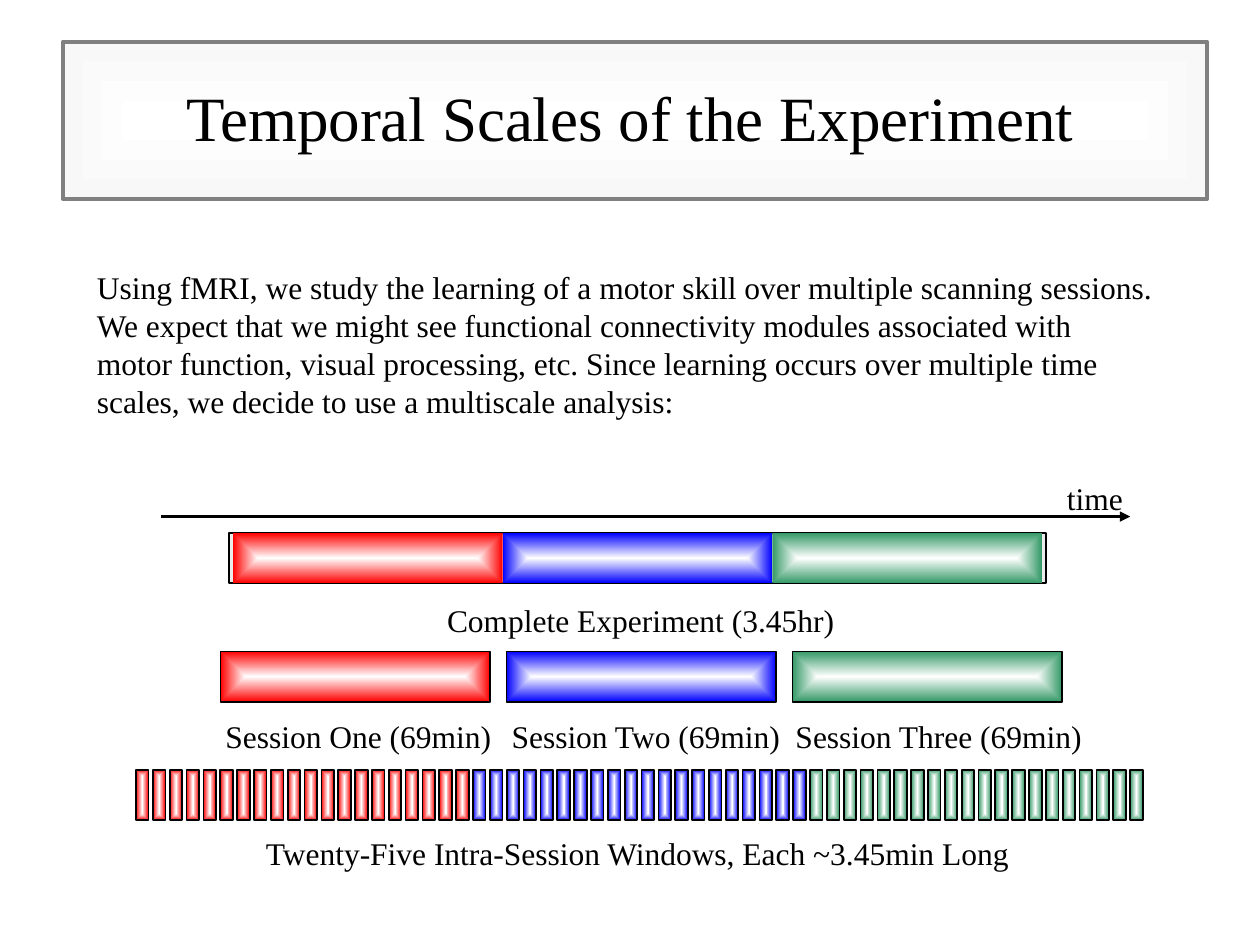
from lxml.etree import SubElement
from pptx import Presentation
from pptx.dml.color import RGBColor
from pptx.enum.shapes import MSO_CONNECTOR, MSO_SHAPE
from pptx.enum.text import MSO_ANCHOR, MSO_AUTO_SIZE, PP_ALIGN
from pptx.oxml import parse_xml
from pptx.oxml.ns import nsdecls, qn
from pptx.util import Inches, Pt

FONT = "Times New Roman"
COLORS = {
    "text": "000000", "white": "FFFFFF", "frame": "808080",
    "panel": "F8F8F8", "track": "EAEAEA",
    "one": "FF0000", "two": "0000FF", "three": "339966",
}
TITLE = "Temporal Scales of the Experiment"
INTRO = (
    "Using fMRI, we study the learning of a motor skill over multiple scanning "
    "sessions. We expect that we might see functional connectivity modules "
    "associated with motor function, visual processing, etc. Since learning "
    "occurs over multiple time scales, we decide to use a multiscale analysis:"
)
SESSIONS = [
    ("one", "Session One (69min)", 1.61, 2.47),
    ("two", "Session Two (69min)", 3.92, 2.41),
    ("three", "Session Three (69min)", 6.15, 2.6),
]
LABELS = [
    (INTRO, 0.67, 2.08, 8.58, 1.3, PP_ALIGN.LEFT),
    ("time", 8.37, 3.75, 0.67, 0.4, PP_ALIGN.LEFT),
    ("Complete Experiment (3.45hr)", 3.34, 4.72, 3.49, 0.4, PP_ALIGN.CENTER),
    ("Twenty-Five Intra-Session Windows, Each ~3.45min Long",
     1.55, 6.57, 7.02, 0.4, PP_ALIGN.CENTER),
]
BAR_H, SESSION_W, SESSION_PITCH = 0.4, 2.14, 2.27
WHOLE_Y, SESSION_Y, SESSION_LABEL_Y, WINDOW_Y = 4.23, 5.17, 5.64, 6.11
WINDOWS_PER_SESSION, WINDOW_W = 20, 0.1
FIRST_WINDOW, LAST_WINDOW = 1.08, 8.97


def rgb(name):
    return RGBColor.from_string(COLORS[name])


def add_run(p, text, size):
    r = p.add_run()
    r.text = text
    r.font.size, r.font.name = Pt(size), FONT
    r.font.color.rgb = rgb("text")


def add_label(s, text, x, y, w, h, align):
    tf = s.shapes.add_textbox(*map(Inches, (x, y, w, h))).text_frame
    tf.word_wrap = True
    tf.auto_size = MSO_AUTO_SIZE.SHAPE_TO_FIT_TEXT
    tf.paragraphs[0].alignment = align
    add_run(tf.paragraphs[0], text, 18)


def add_bar(s, x, y, w, h, edge, line="text", width=1):
    sp = s.shapes.add_shape(MSO_SHAPE.RECTANGLE, *map(Inches, (x, y, w, h)))
    sp.shadow.inherit = False
    sp.element.spPr.find(qn("a:prstGeom")).addnext(parse_xml(
        f'<a:gradFill {nsdecls("a")} rotWithShape="1"><a:gsLst>'
        f'<a:gs pos="0"><a:srgbClr val="{COLORS["white"]}"/></a:gs>'
        f'<a:gs pos="100000"><a:srgbClr val="{COLORS[edge]}"/></a:gs></a:gsLst>'
        '<a:path path="rect"><a:fillToRect l="50000" t="50000" r="50000" b="50000"/>'
        '</a:path></a:gradFill>'.replace('path="rect"', 'path="shape"')))
    if line:
        sp.line.color.rgb = rgb(line)
        sp.line.width = Pt(width)
    else:
        sp.line.fill.background()
    return sp


def add_time_arrow(s, x1, x2, y):
    arrow = s.shapes.add_connector(
        MSO_CONNECTOR.STRAIGHT, *map(Inches, (x1, y, x2, y)))
    arrow.line.color.rgb = rgb("text")
    arrow.line.width = Pt(1.5)
    SubElement(arrow.line._get_or_add_ln(), qn("a:tailEnd"), type="triangle")
    SubElement(arrow._element.spPr, qn("a:effectLst"))


def add_title(s):
    title = s.shapes.title
    title.left, title.top, title.width, title.height = map(
        Inches, (0.5, 0.3, 9, 1.25))
    tf = title.text_frame
    tf.auto_size = MSO_AUTO_SIZE.NONE
    tf.vertical_anchor = MSO_ANCHOR.MIDDLE
    tf.paragraphs[0].alignment = PP_ALIGN.CENTER
    add_run(tf.paragraphs[0], TITLE, 36)
    panel = add_bar(s, 0.5, 0.33, 9.08, 1.25, "panel", "frame", 2.25)
    title.element.addprevious(panel.element)


def main():
    prs = Presentation()
    prs.slide_width, prs.slide_height = Inches(10), Inches(7.5)
    s = prs.slides.add_slide(prs.slide_layouts[5])
    add_title(s)
    add_bar(s, 1.82, WHOLE_Y, 6.48, BAR_H, "track")

    window_count = WINDOWS_PER_SESSION * len(SESSIONS)
    window_pitch = (LAST_WINDOW - FIRST_WINDOW) / (window_count - 1)
    for i, (color, label, label_x, label_w) in enumerate(SESSIONS):
        add_bar(s, 1.85 + i * SESSION_W, WHOLE_Y, SESSION_W, BAR_H, color, None)
        add_bar(s, 1.75 + i * SESSION_PITCH, SESSION_Y, SESSION_W, BAR_H, color)
        add_label(s, label, label_x, SESSION_LABEL_Y, label_w, BAR_H,
                  PP_ALIGN.CENTER)
        for j in range(WINDOWS_PER_SESSION):
            x = FIRST_WINDOW + (i * WINDOWS_PER_SESSION + j) * window_pitch
            add_bar(s, x, WINDOW_Y, WINDOW_W, BAR_H, color)

    add_time_arrow(s, 1.28, 8.97, 4.1)
    for label in LABELS:
        add_label(s, *label)
    prs.save("out.pptx")


if __name__ == "__main__":
    main()
